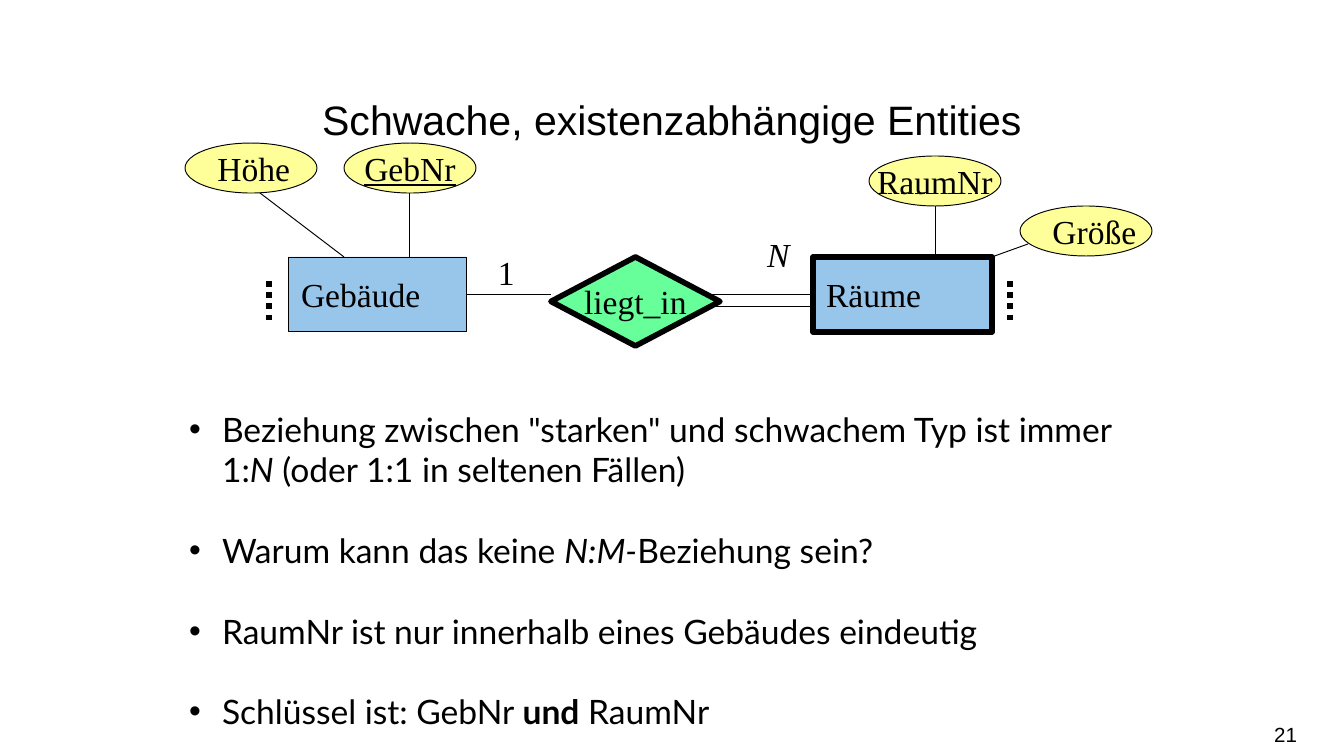
from lxml import etree
from pptx import Presentation
from pptx.dml.color import RGBColor
from pptx.enum.dml import MSO_LINE
from pptx.enum.shapes import MSO_CONNECTOR, MSO_SHAPE
from pptx.enum.text import MSO_ANCHOR, PP_ALIGN
from pptx.oxml.ns import qn
from pptx.util import Pt

RECTANGLE, DIAMOND, ELLIPSE = MSO_SHAPE.RECTANGLE, MSO_SHAPE.DIAMOND, MSO_SHAPE.OVAL
LEFT, CENTER, RIGHT = PP_ALIGN.LEFT, PP_ALIGN.CENTER, PP_ALIGN.RIGHT
TOP, MIDDLE = MSO_ANCHOR.TOP, MSO_ANCHOR.MIDDLE
DASH, DOTS = MSO_LINE.DASH, MSO_LINE.ROUND_DOT

EMU_PER_PX = 914400 / 134.4
SLIDE_SIZE = (1344, 756)
BLACK, BLUE, GREEN, YELLOW = "000000", "98C6EA", "66FF99", "FFFF99"
SANS, BODY, SERIF = "Arial", "Lato", "Times New Roman"
THIN, THICK = 0.5, 3
INSET_X, INSET_Y = 13, 7
BULLET_INDENT = 33

# Each run is (text, style), style being "", "bold", "italic" or "underline".
TITLE = [("Schwache, existenzabhängige Entities", "")]
PAGE_NUMBER = [("21", "")]
POINTS = [
    [('Beziehung zwischen "starken" und schwachem Typ ist immer 1:', ""),
     ("N", "italic"), (" (oder 1:1 in seltenen Fällen)", "")],
    [("Warum kann das keine ", ""), ("N:M-", "italic"), ("Beziehung sein?", "")],
    [("RaumNr ist nur innerhalb eines Gebäudes eindeutig", "")],
    [("Schlüssel ist: GebNr ", ""), ("und", "bold"), (" RaumNr", "")],
]

ENTITY_SIZE, RELATION_SIZE, ATTRIBUTE_SIZE = (179, 75), (169, 89), (132, 50)
# preset, position, size, fill, line width, label, style, alignment
NODES = [
    (RECTANGLE, (288, 257), ENTITY_SIZE, BLUE, THIN, "Gebäude", "", LEFT),
    (DIAMOND, (551, 257), RELATION_SIZE, GREEN, THICK, "liegt_in", "", CENTER),
    (RECTANGLE, (813, 257), ENTITY_SIZE, BLUE, THICK, "Räume", "", LEFT),
    (ELLIPSE, (185, 143), ATTRIBUTE_SIZE, YELLOW, THIN, "Höhe", "", LEFT),
    (ELLIPSE, (344, 143), ATTRIBUTE_SIZE, YELLOW, THIN, "GebNr", "underline", CENTER),
    (ELLIPSE, (1020, 206), ATTRIBUTE_SIZE, YELLOW, THIN, "Größe", "", LEFT),
    (ELLIPSE, (869, 156), ATTRIBUTE_SIZE, YELLOW, THIN, "RaumNr", "", CENTER),
]
# start, end, width, dash
LINES = [
    ((710, 294), (813, 294), THIN, None),
    ((710, 307), (813, 307), THIN, None),
    ((410, 193), (410, 257), THIN, None),
    ((260, 193), (344, 257), THIN, None),
    ((551, 294), (467, 294), THIN, None),
    ((888, 194), (982, 194), THIN, DASH),
    ((1010, 281), (1010, 320), THICK, DOTS),
    ((269, 281), (269, 320), THICK, DOTS),
    ((935, 206), (935, 257), THIN, None),
    ((1028, 244), (992, 257), THIN, None),
]
CARDINALITIES = [
    ((485, 245, 38, 54), "1", ""),
    ((754, 227, 50, 54), "N", "italic"),
]


def px(value):
    return round(value * EMU_PER_PX)


def color(hex_string):
    return RGBColor.from_string(hex_string)


def set_frame(frame, anchor=TOP, wrap=True, inset_x=INSET_X):
    frame.word_wrap = wrap
    frame.vertical_anchor = anchor
    frame.margin_left = frame.margin_right = px(inset_x)
    frame.margin_top = frame.margin_bottom = px(INSET_Y)


def add_runs(paragraph, runs, font_name, size, alignment=LEFT):
    paragraph.alignment = alignment
    for text, style in runs:
        run = paragraph.add_run()
        run.text = text
        run.font.name = font_name
        run.font.size = Pt(size)
        run.font.color.rgb = color(BLACK)
        run.font.bold = style == "bold"
        run.font.italic = style == "italic"
        run.font.underline = style == "underline"


def add_text(slide, box, **frame_options):
    frame = slide.shapes.add_textbox(*map(px, box)).text_frame
    set_frame(frame, **frame_options)
    return frame


def add_bullet(paragraph):
    properties = paragraph._p.get_or_add_pPr()
    properties.set("marL", str(px(BULLET_INDENT)))
    properties.set("indent", str(-px(BULLET_INDENT)))
    etree.SubElement(properties, qn("a:buFont")).set("typeface", SANS)
    etree.SubElement(properties, qn("a:buChar")).set("char", "•")


def add_points(slide):
    frame = add_text(slide, (176, 402, 1000, 421))
    for index, runs in enumerate(POINTS):
        paragraph = frame.add_paragraph() if index else frame.paragraphs[0]
        add_bullet(paragraph)
        if index:
            paragraph.space_before = Pt(21.6)
        add_runs(paragraph, runs, BODY, 18)


def add_node(slide, preset, position, size, fill, width, label, style, alignment):
    shape = slide.shapes.add_shape(preset, *map(px, position + size))
    shape.shadow.inherit = False
    shape.fill.solid()
    shape.fill.fore_color.rgb = color(fill)
    shape.line.color.rgb = color(BLACK)
    shape.line.width = Pt(width)
    set_frame(shape.text_frame, MIDDLE, wrap=False)
    add_runs(shape.text_frame.paragraphs[0], [(label, style)], SERIF, 18, alignment)


def add_line(slide, start, end, width, dash):
    connector = slide.shapes.add_connector(MSO_CONNECTOR.STRAIGHT, *map(px, start + end))
    connector.line.color.rgb = color(BLACK)
    connector.line.width = Pt(width)
    if dash is not None:
        connector.line.dash_style = dash
    etree.SubElement(connector._element.spPr, qn("a:effectLst"))


def main():
    presentation = Presentation()
    presentation.slide_width, presentation.slide_height = map(px, SLIDE_SIZE)
    slide = presentation.slides.add_slide(presentation.slide_layouts[6])

    number = add_text(slide, (996, 714, 301, 40), anchor=MIDDLE, inset_x=0)
    add_runs(number.paragraphs[0], PAGE_NUMBER, SANS, 11, RIGHT)
    title = add_text(slide, (168, 75, 1008, 59)).paragraphs[0]
    title.line_spacing = 1.25
    add_runs(title, TITLE, SANS, 22, CENTER)
    add_points(slide)

    for node in NODES:
        add_node(slide, *node)
    for line in LINES:
        add_line(slide, *line)
    for box, label, style in CARDINALITIES:
        frame = add_text(slide, box, wrap=False)
        add_runs(frame.paragraphs[0], [(label, style)], SERIF, 18)

    presentation.save("out.pptx")


if __name__ == "__main__":
    main()
